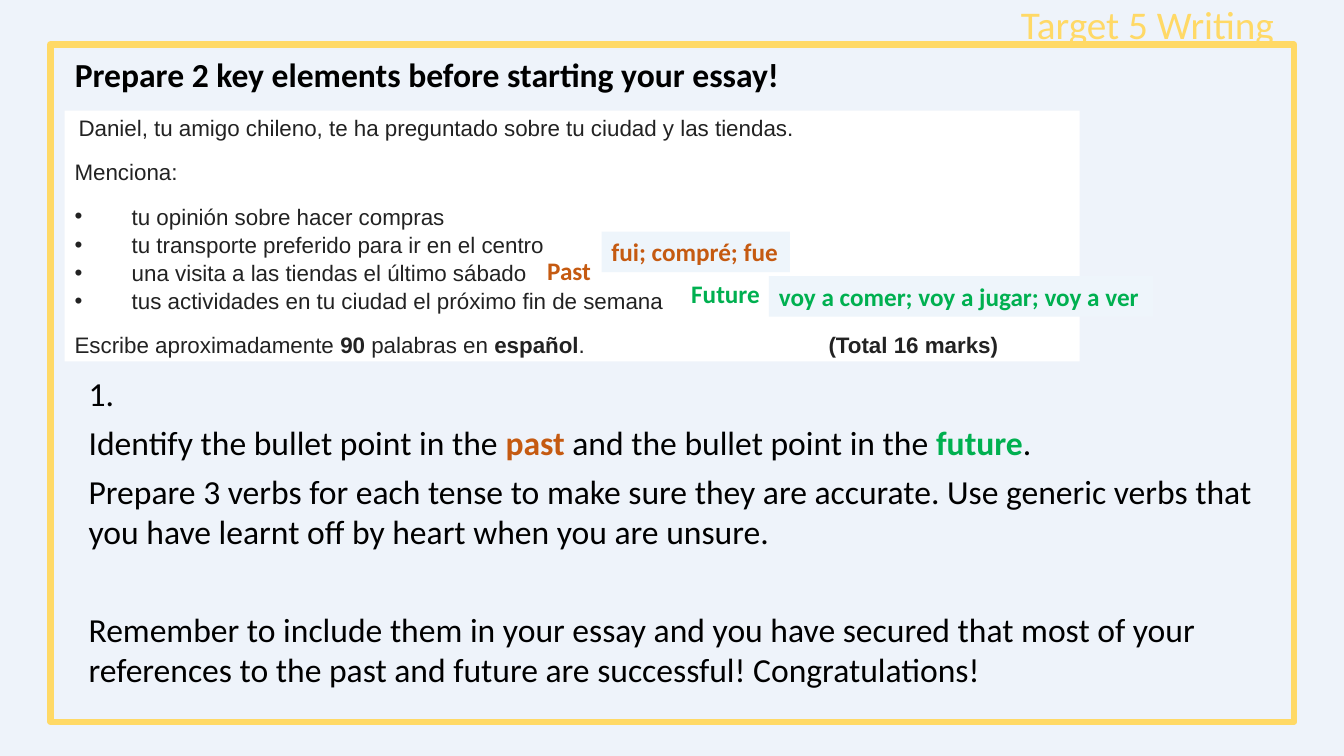
from lxml import etree
from pptx import Presentation
from pptx.dml.color import RGBColor
from pptx.enum.shapes import MSO_SHAPE
from pptx.enum.text import MSO_ANCHOR, MSO_AUTO_SIZE, PP_ALIGN
from pptx.oxml.ns import qn
from pptx.util import Cm, Pt

RECT = MSO_SHAPE.RECTANGLE
TOP, MIDDLE = MSO_ANCHOR.TOP, MSO_ANCHOR.MIDDLE
LEFT = PP_ALIGN.LEFT
FIXED = MSO_AUTO_SIZE.NONE


class Theme:
    back = RGBColor(0xEE, 0xF3, 0xFA)
    chip = RGBColor(0xEE, 0xF5, 0xFB)
    white = RGBColor(0xFF, 0xFF, 0xFF)
    black = RGBColor(0x00, 0x00, 0x00)
    ink = RGBColor(0x22, 0x22, 0x22)
    gold = RGBColor(0xFF, 0xD9, 0x66)
    past = RGBColor(0xC5, 0x5A, 0x11)
    future = RGBColor(0x00, 0xB0, 0x50)
    main, exam = "Calibri", "Arial"
    tag, body, label, task = Pt(28), Pt(24), Pt(18), Pt(16)


def write(para, runs, font, size, color):
    """Add runs given as (text, bold, own color or None)."""
    para.alignment = LEFT
    for text, bold, own in runs:
        run = para.add_run()
        run.text = text
        run.font.name, run.font.size, run.font.bold = font, size, bold
        run.font.color.rgb = own or color


def place(shape, left, top, width, height, anchor=TOP, wrap=True):
    """Move a shape and return its text frame."""
    shape.left, shape.top = Cm(left), Cm(top)
    shape.width, shape.height = Cm(width), Cm(height)
    frame = shape.text_frame
    frame.auto_size, frame.word_wrap = FIXED, wrap
    frame.vertical_anchor = anchor
    return frame


prs = Presentation()
prs.slide_width, prs.slide_height = Cm(33.87), Cm(19.05)
slide = prs.slides.add_slide(prs.slide_layouts[1])
slide.background.fill.solid()
slide.background.fill.fore_color.rgb = Theme.back
shapes = slide.shapes

# Gold frame and its tag
border = shapes.add_shape(RECT, Cm(1.27), Cm(1.12), Cm(31.34), Cm(17.07))
border.shadow.inherit = False
border.fill.background()
border.line.color.rgb, border.line.width = Theme.gold, Pt(4.5)
tag = place(shapes.add_textbox(0, 0, 0, 0), 25.48, 0, 6.96, 1.2, wrap=False)
tag.margin_top = 0
write(tag.paragraphs[0], [("Target 5 Writing", False, None)],
      Theme.main, Theme.tag, Theme.gold)

# Title
title = place(shapes.title, 1.63, 1.24, 28.98, 1.27)
write(title.paragraphs[0],
      [("Prepare 2 key elements before starting your essay!", True, None)],
      Theme.main, Theme.body, Theme.black)

# Exam task: kind of line, space before, runs
card = shapes.add_shape(RECT, 0, 0, 0, 0)
card.shadow.inherit = False
card.fill.solid()
card.fill.fore_color.rgb = Theme.white
card.line.fill.background()
task = place(card, 1.63, 2.79, 25.58, 6.32, MIDDLE)
lines = [
    ("intro", 0, [("Daniel, tu amigo chileno, te ha preguntado sobre tu ciudad y las tiendas.", False, None)]),
    ("plain", 12, [("Menciona:", False, None)]),
    ("point", 13, [("tu opinión sobre hacer compras", False, None)]),
    ("point", 1, [("tu transporte preferido para ir en el centro", False, None)]),
    ("point", 1, [("una visita a las tiendas el último sábado", False, None)]),
    ("point", 1, [("tus actividades en tu ciudad el próximo fin de semana", False, None)]),
    ("marks", 12, [("Escribe aproximadamente ", False, None), ("90", True, None),
                   (" palabras en ", False, None), ("español", True, None),
                   (".\t", False, None), ("(Total 16 marks)", True, None)]),
]
for row, (kind, gap, runs) in enumerate(lines):
    para = task.paragraphs[0] if row == 0 else task.add_paragraph()
    props = para._p.get_or_add_pPr()
    if kind == "intro":
        props.set("marL", str(Cm(0.1)))
    elif kind == "point":
        props.set("marL", str(Cm(1.44)))
        props.set("indent", str(-Cm(1.44)))
        etree.SubElement(props, qn("a:buFont"), typeface=Theme.exam)
        etree.SubElement(props, qn("a:buChar"), char="•")
    elif kind == "marks":
        tabs = etree.SubElement(props, qn("a:tabLst"))
        etree.SubElement(tabs, qn("a:tab"), pos=str(Cm(19)), algn="l")
    para.space_before = Pt(gap)
    write(para, runs, Theme.exam, Theme.task, Theme.ink)

# Advice
advice = place(slide.placeholders[1], 1.98, 9.27, 30.18, 8.28)
steps = [
    (0, [("1.", False, None)]),
    (6, [("Identify the bullet point in the ", False, None), ("past", True, Theme.past),
         (" and the bullet point in the ", False, None), ("future", True, Theme.future),
         (".", False, None)]),
    (6, [("Prepare 3 verbs for each tense to make sure they are accurate. "
          "Use generic verbs that you have learnt off by heart when you are unsure.", False, None)]),
    (41, [("Remember to include them in your essay and you have secured that most of your "
           "references to the past and future are successful! Congratulations!", False, None)]),
]
for row, (gap, runs) in enumerate(steps):
    para = advice.paragraphs[0] if row == 0 else advice.add_paragraph()
    props = para._p.get_or_add_pPr()
    props.set("marL", "0")
    props.set("indent", "0")
    etree.SubElement(props, qn("a:buNone"))
    para.space_before = Pt(gap)
    write(para, runs, Theme.main, Theme.body, Theme.black)

# Tense labels and verb chips
notes = [
    ("Past", Theme.past, False, 13.54, 6.3, 1.63),
    ("Future", Theme.future, False, 17.17, 6.88, 2.26),
    ("fui; compré; fue", Theme.past, True, 15.16, 5.84, 4.75),
    ("voy a comer; voy a jugar; voy a ver", Theme.future, True, 19.38, 6.96, 9.68),
]
for text, color, filled, left, top, width in notes:
    if filled:
        note = shapes.add_shape(RECT, 0, 0, 0, 0)
        note.shadow.inherit = False
        note.fill.solid()
        note.fill.fore_color.rgb = Theme.chip
        note.line.fill.background()
    else:
        note = shapes.add_textbox(0, 0, 0, 0)
    frame = place(note, left, top, width, 1.02, wrap=False)
    write(frame.paragraphs[0], [(text, True, None)], Theme.main, Theme.label, color)

prs.save("out.pptx")
